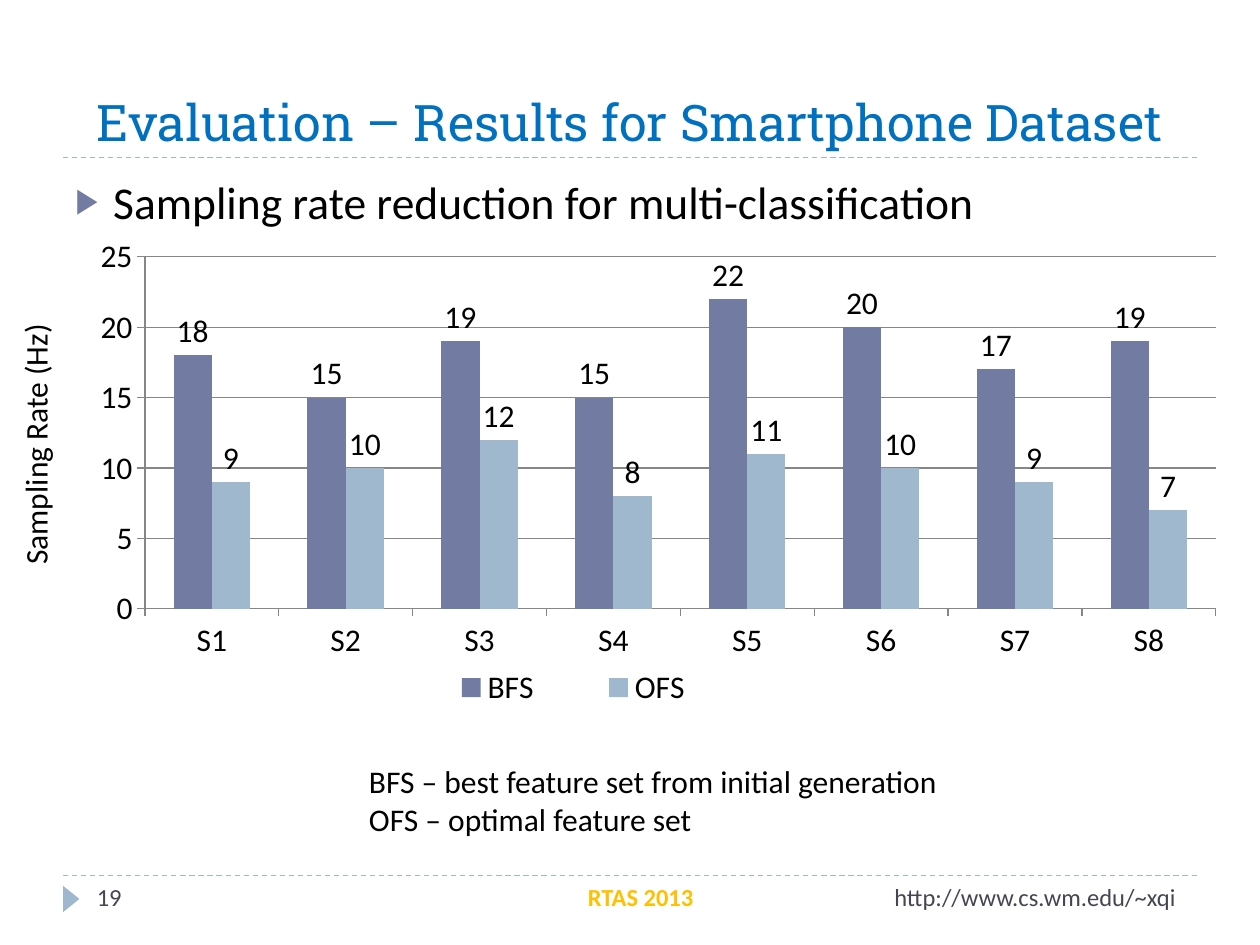
from lxml import etree
from pptx import Presentation
from pptx.chart.data import CategoryChartData
from pptx.dml.color import RGBColor
from pptx.enum.chart import XL_CHART_TYPE, XL_LABEL_POSITION, XL_LEGEND_POSITION, XL_TICK_MARK
from pptx.enum.dml import MSO_LINE
from pptx.enum.shapes import MSO_CONNECTOR, MSO_SHAPE
from pptx.enum.text import MSO_ANCHOR, MSO_AUTO_SIZE, PP_ALIGN
from pptx.oxml.ns import qn
from pptx.util import Inches, Pt

CLUSTERED = XL_CHART_TYPE.COLUMN_CLUSTERED
LABEL_ABOVE = XL_LABEL_POSITION.OUTSIDE_END
LEGEND_RIGHT = XL_LEGEND_POSITION.RIGHT
TICK_OUT = XL_TICK_MARK.OUTSIDE
DASH = MSO_LINE.DASH
STRAIGHT = MSO_CONNECTOR.STRAIGHT
TRIANGLE = MSO_SHAPE.ISOSCELES_TRIANGLE
TOP, BOTTOM = MSO_ANCHOR.TOP, MSO_ANCHOR.BOTTOM
FIT_SHAPE = MSO_AUTO_SIZE.SHAPE_TO_FIT_TEXT
LEFT, CENTER = PP_ALIGN.LEFT, PP_ALIGN.CENTER

BLUE = RGBColor(0x00, 0x70, 0xC0)
BLACK = RGBColor(0x00, 0x00, 0x00)
SLATE = RGBColor(0x46, 0x46, 0x53)
GOLD = RGBColor(0xFF, 0xC0, 0x00)
INDIGO = RGBColor(0x72, 0x7C, 0xA3)
PALE_BLUE = RGBColor(0x9F, 0xB8, 0xCD)
GREY = RGBColor(0x86, 0x86, 0x86)

BODY_FONT = "Calibri"
TITLE_FONT = "Roboto Slab"

SUBJECTS = ["S1", "S2", "S3", "S4", "S5", "S6", "S7", "S8"]
SAMPLING_RATES = {
    "BFS": ([18, 15, 19, 15, 22, 20, 17, 19], INDIGO),
    "OFS": ([9, 10, 12, 8, 11, 10, 9, 7], PALE_BLUE),
}


def add_text(slide, box, text, size, color=BLACK, font=BODY_FONT, align=LEFT,
             anchor=TOP, bold=False, wrap=True):
    """Place formatted text in a box given in inches."""
    textbox = slide.shapes.add_textbox(*map(Inches, box))
    frame = textbox.text_frame
    frame.text = text
    frame.word_wrap = wrap
    frame.vertical_anchor = anchor
    if not wrap:
        frame.auto_size = FIT_SHAPE
    for paragraph in frame.paragraphs:
        paragraph.alignment = align
        for run in paragraph.runs:
            run.font.name = font
            run.font.size = Pt(size)
            run.font.bold = bold
            run.font.color.rgb = color
    return textbox


def add_rule(slide, left, top, width):
    """Draw a dashed horizontal rule."""
    rule = slide.shapes.add_connector(
        STRAIGHT, Inches(left), Inches(top), Inches(left + width), Inches(top))
    rule.line.color.rgb = PALE_BLUE
    rule.line.width = Pt(0.75)
    rule.line.dash_style = DASH
    etree.SubElement(rule._element.spPr, qn("a:effectLst"))


def add_heading(slide, left, top, width, height):
    """Place the slide title above its rule."""
    add_text(slide, (left, top, width, height), "Evaluation – Results for Smartphone Dataset",
             28.8, BLUE, TITLE_FONT, CENTER, BOTTOM)
    add_rule(slide, left, top + height, width)


def add_bullet_point(slide, left, top, width, height):
    """Place the main point with its triangular bullet."""
    point = add_text(slide, (left, top, width, height),
                     "Sampling rate reduction for multi-classification", 26)
    paragraph = point.text_frame.paragraphs[0]
    paragraph.space_before = Pt(6)
    properties = paragraph._p.get_or_add_pPr()
    properties.set("marL", str(Inches(0.3)))
    properties.set("indent", str(Inches(-0.3)))
    bullet_color = etree.SubElement(properties, qn("a:buClr"))
    etree.SubElement(bullet_color, qn("a:srgbClr"), val=str(INDIGO))
    etree.SubElement(properties, qn("a:buSzPct"), val="76000")
    etree.SubElement(properties, qn("a:buFont"), typeface=BODY_FONT)
    etree.SubElement(properties, qn("a:buChar"), char="▶")


def set_layout(element, index, x, y, w, h, inner=False):
    """Fix a chart part at fractions of the chart's size."""
    for old_layout in element.findall(qn("c:layout")):
        element.remove(old_layout)
    layout = etree.Element(qn("c:layout"))
    manual = etree.SubElement(layout, qn("c:manualLayout"))
    if inner:
        etree.SubElement(manual, qn("c:layoutTarget"), val="inner")
    for tag in ("xMode", "yMode"):
        etree.SubElement(manual, qn(f"c:{tag}"), val="edge")
    for tag, value in zip("xywh", (x, y, w, h)):
        etree.SubElement(manual, qn(f"c:{tag}"), val=str(value))
    element.insert(index, layout)


def add_rate_chart(slide, left, top, width, height):
    """Place the clustered columns of sampling rates and the axis caption."""
    data = CategoryChartData()
    data.categories = SUBJECTS
    for name, (rates, _) in SAMPLING_RATES.items():
        data.add_series(name, rates)
    chart = slide.shapes.add_chart(
        CLUSTERED, *map(Inches, (left, top, width, height)), data).chart
    chart.has_title = False
    chart.font.name = BODY_FONT
    chart.font.size = Pt(18)
    chart.font.color.rgb = BLACK

    plot = chart.plots[0]
    plot.gap_width = 150
    plot.overlap = 0
    plot.vary_by_categories = False
    for series, (_, color) in zip(plot.series, SAMPLING_RATES.values()):
        series.format.fill.solid()
        series.format.fill.fore_color.rgb = color
        series.data_labels.show_value = True
        series.data_labels.position = LABEL_ABOVE

    for axis in (chart.category_axis, chart.value_axis):
        axis.major_tick_mark = TICK_OUT
        axis.format.line.color.rgb = GREY
    rate_axis = chart.value_axis
    rate_axis.minimum_scale, rate_axis.maximum_scale, rate_axis.major_unit = 0, 25, 5
    rate_axis.has_major_gridlines = True
    rate_axis.major_gridlines.format.line.color.rgb = GREY

    chart.has_legend = True
    chart.legend.position = LEGEND_RIGHT
    chart.legend.include_in_layout = False
    set_layout(chart.legend._element, 1, 0.34, 0.82, 0.28, 0.1)
    set_layout(chart._chartSpace.chart.plotArea, 0, 0.14, 0.05, 0.85, 0.67, inner=True)

    caption = add_text(slide, (left - 0.67, top + 1.35, 2.4, 0.4),
                       "Sampling Rate (Hz)", 18, wrap=False)
    caption.rotation = 270


def add_abbreviations(slide, left, top, width, height):
    """Explain the two series names."""
    add_text(slide, (left, top, width, height),
             "BFS – best feature set from initial generation\nOFS – optimal feature set",
             18, wrap=False)


def add_footer(slide, left, top, width, height):
    """Place the footer rule, page marker, number, venue and address."""
    add_rule(slide, left, top, width)
    marker = slide.shapes.add_shape(
        TRIANGLE, *map(Inches, (left - 0.04, top + 0.12, 0.21, 0.13)))
    marker.rotation = 90
    marker.shadow.inherit = False
    marker.fill.solid()
    marker.fill.fore_color.rgb = PALE_BLUE
    marker.line.fill.background()
    add_text(slide, (left + 0.17, top, 2.17, height), "19", 14, SLATE)
    add_text(slide, (left + 2.67, top, 3.83, height), "RTAS 2013", 14, GOLD,
             align=CENTER, bold=True)
    add_text(slide, (left + 6.5, top, 2.5, height), "http://www.cs.wm.edu/~xqi", 14, SLATE)


def main():
    """Build and save the slide."""
    presentation = Presentation()
    presentation.slide_width = Inches(10)
    presentation.slide_height = Inches(7.5)
    slide = presentation.slides.add_slide(presentation.slide_layouts[6])
    add_heading(slide, 0.5, 0.17, 9, 1.08)
    add_bullet_point(slide, 0.5, 1.33, 9, 5.4)
    add_rate_chart(slide, -0.25, 1.83, 10, 4.17)
    add_abbreviations(slide, 2.83, 6, 5.19, 0.71)
    add_footer(slide, 0.5, 6.95, 9, 0.4)
    presentation.save("out.pptx")


if __name__ == "__main__":
    main()
